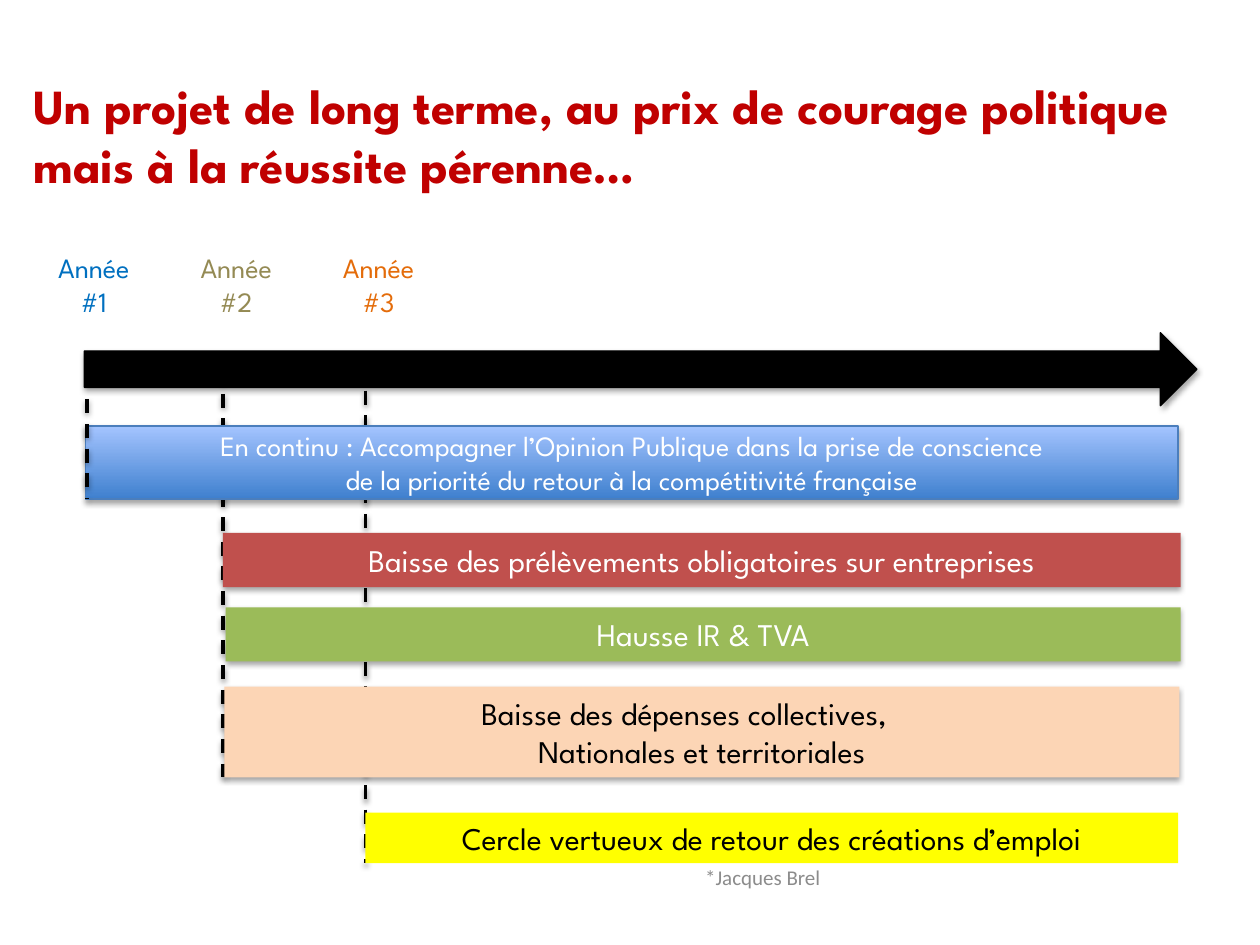
from dataclasses import dataclass

from lxml.etree import SubElement
from pptx import Presentation
from pptx.dml.color import RGBColor
from pptx.enum.dml import MSO_LINE
from pptx.enum.shapes import MSO_CONNECTOR, MSO_SHAPE
from pptx.enum.text import MSO_ANCHOR, PP_ALIGN
from pptx.oxml.ns import qn
from pptx.util import Inches, Pt


@dataclass(frozen=True)
class Theme:
    font: str = "League Spartan"
    note_font: str = "Calibri"
    title_size: int = 28
    bar_size: int = 18
    small_size: int = 16
    note_size: int = 12
    title: str = "C00000"
    note: str = "8C8C8C"
    black: str = "000000"
    white: str = "FFFFFF"
    years: tuple = ("0070C0", "948A54", "E46C0A")
    gradient: tuple = ("3F80CE", "A4C4FF")
    gradient_line: str = "4B7EBC"
    red: str = "C0504D"
    green: str = "9BBB59"
    peach: str = "FCD5B5"
    yellow: str = "FFFF00"


class TimelineSlide:
    def __init__(self, presentation, theme):
        self.theme = theme
        self.slide = presentation.slides.add_slide(presentation.slide_layouts[6])

    def add_lines(self, shape, lines, size, color, align=PP_ALIGN.CENTER,
                  anchor=MSO_ANCHOR.MIDDLE, font=None, bold=False):
        frame = shape.text_frame
        frame.word_wrap = True
        frame.vertical_anchor = anchor
        for index, line in enumerate(lines):
            paragraph = frame.add_paragraph() if index else frame.paragraphs[0]
            paragraph.alignment = align
            run = paragraph.add_run()
            run.text = line
            run.font.name = font or self.theme.font
            run.font.size = Pt(size)
            run.font.bold = bold
            run.font.color.rgb = RGBColor.from_string(color)

    def shade(self, shape, opacity, distance):
        effects = SubElement(shape._element.spPr, qn("a:effectLst"))
        if not opacity:
            return
        shadow = SubElement(effects, qn("a:outerShdw"), blurRad=str(Pt(3.1)),
                            dist=str(Pt(distance)), dir="5400000", rotWithShape="0")
        color = SubElement(shadow, qn("a:srgbClr"), val=self.theme.black)
        SubElement(color, qn("a:alpha"), val=str(opacity * 1000))

    def text(self, box, lines, size, color, **style):
        shape = self.slide.shapes.add_textbox(*map(Inches, box))
        self.add_lines(shape, lines, size, color, **style)
        return shape

    def block(self, box, fill, kind=MSO_SHAPE.RECTANGLE, outline=None, opacity=35):
        shape = self.slide.shapes.add_shape(kind, *map(Inches, box))
        if isinstance(fill, tuple):
            shape.fill.gradient()
            shape.fill.gradient_angle = 90
            for stop, color in zip(shape.fill.gradient_stops, fill):
                stop.color.rgb = RGBColor.from_string(color)
        else:
            shape.fill.solid()
            shape.fill.fore_color.rgb = RGBColor.from_string(fill)
        if outline:
            shape.line.color.rgb = RGBColor.from_string(outline)
            shape.line.width = Pt(0.75)
        else:
            shape.line.fill.background()
        self.shade(shape, opacity, 1.8)
        return shape

    def bar(self, box, fill, lines, size, color, anchor=MSO_ANCHOR.MIDDLE, **look):
        self.add_lines(self.block(box, fill, **look), lines, size, color, anchor=anchor)

    def marker(self, x, top, bottom):
        line = self.slide.shapes.add_connector(
            MSO_CONNECTOR.STRAIGHT, Inches(x), Inches(top), Inches(x), Inches(bottom))
        line.line.color.rgb = RGBColor.from_string(self.theme.black)
        line.line.width = Pt(2)
        line.line.dash_style = MSO_LINE.DASH
        self.shade(line, 38, 1.6)


def main():
    presentation = Presentation()
    presentation.slide_width = Inches(10)
    presentation.slide_height = Inches(7.5)
    theme = Theme()
    timeline = TimelineSlide(presentation, theme)

    timeline.marker(2.9, 3.1, 6.85)
    timeline.marker(1.77, 2.93, 6.17)
    timeline.text((4.28, 6.76, 2.33, 0.4), ["*Jacques Brel"], theme.note_size,
                  theme.note, align=PP_ALIGN.RIGHT, font=theme.note_font)
    title = timeline.text(
        (0.17, 0.18, 9.82, 2.25),
        ["Un projet de long terme, au prix de courage politique mais à la réussite pérenne…"],
        theme.title_size, theme.title, align=PP_ALIGN.LEFT, bold=True)
    title.text_frame.margin_bottom = Inches(0.52)

    timeline.block((0.67, 2.64, 8.83, 0.58), theme.black,
                   kind=MSO_SHAPE.RIGHT_ARROW, outline=theme.black)
    timeline.bar((0.68, 3.38, 8.67, 0.58), theme.gradient,
                 ["En continu : Accompagner l’Opinion Publique dans la prise de conscience",
                  "de la priorité du retour à la compétitivité française"],
                 theme.small_size, theme.white, outline=theme.gradient_line)
    measures = [
        ((1.77, 4.23, 7.6, 0.43), theme.red, theme.white,
         ["Baisse des prélèvements obligatoires sur entreprises"]),
        ((1.79, 4.82, 7.58, 0.43), theme.green, theme.white, ["Hausse IR & TVA"]),
        ((1.78, 5.45, 7.58, 0.72), theme.peach, theme.black,
         ["Baisse des dépenses collectives, \t", "Nationales et territoriales"]),
    ]
    for box, fill, color, lines in measures:
        timeline.bar(box, fill, lines, theme.bar_size, color)

    timeline.marker(0.69, 3.17, 3.96)
    for index, color in enumerate(theme.years):
        timeline.text((0.18 + 1.13 * index, 1.94, 1.13, 0.64),
                      ["Année", f"#{index + 1}"], theme.small_size, color,
                      anchor=MSO_ANCHOR.TOP)
    timeline.bar((2.9, 6.45, 6.45, 0.4), theme.yellow,
                 ["Cercle vertueux de retour des créations d’emploi"],
                 theme.bar_size, theme.black, anchor=MSO_ANCHOR.TOP, opacity=0)

    presentation.save("out.pptx")


if __name__ == "__main__":
    main()
